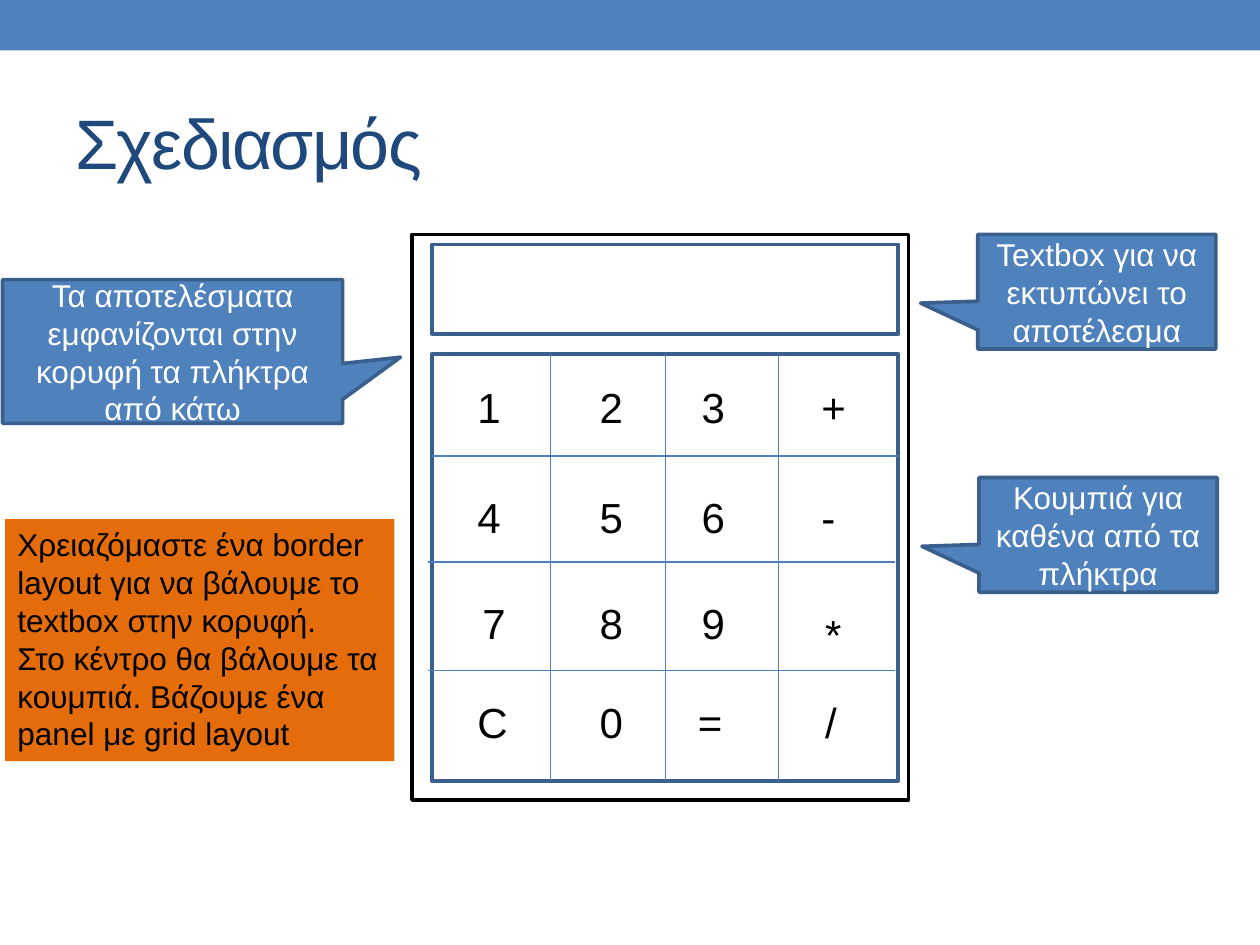
from pptx import Presentation
from pptx.util import Inches, Pt
from pptx.dml.color import RGBColor
from pptx.enum.shapes import MSO_SHAPE as Shape, MSO_CONNECTOR as Link
from pptx.enum.text import PP_ALIGN as Align, MSO_ANCHOR as Anchor, MSO_AUTO_SIZE as Fit
from lxml.etree import SubElement
from pptx.oxml.ns import qn

HUE = {"blue": "4F81BD", "edge": "3A5F8C", "navy": "1F497D",
       "orange": "E46C0A", "black": "000000", "white": "FFFFFF"}
FONT = "Arial"

TITLE = "Σχεδιασμός"
NOTE = ["Χρειαζόμαστε ένα border layout για να βάλουμε το textbox στην κορυφή.",
        "Στο κέντρο θα βάλουμε τα κουμπιά. Βάζουμε ένα panel με grid layout"]
CALLS = [
    ("Textbox για να εκτυπώνει το αποτέλεσμα", (7.76, 1.86, 1.89, 0.91), (-0.74, 0.1)),
    ("Τα αποτελέσματα εμφανίζονται στην κορυφή τα πλήκτρα από κάτω",
     (0.02, 2.22, 2.7, 1.14), (0.67, 0.04)),
    ("Κουμπιά για καθένα από τα πλήκτρα", (7.77, 3.79, 1.89, 0.91), (-0.74, 0.1)),
]
FRAMES = {"case": ((3.27, 1.86, 3.94, 4.49), "black"),
          "screen": ((3.43, 1.94, 3.7, 0.71), "edge"),
          "pad": ((3.43, 2.81, 3.7, 3.39), "edge")}
KEYS = ["123+", "456-", "789*", "C0=/"]
COLS = [3.69, 4.66, 5.47, 6.42]
ROWS = [2.98, 3.85, 4.69, 5.48]
WIDTH = {"C": 0.45, "=": 0.4, "+": 0.4, "-": 0.31, "*": 0.33, "/": 0.29}
NUDGE = {"7": (0.04, 0), "=": (-0.03, 0), "*": (0.03, 0.09), "/": (0.03, 0)}
DOWN = [4.37, 5.28, 6.18]
ACROSS = [(3.43, 3.62), (3.4, 4.46), (3.4, 5.32)]

deck = Presentation()
deck.slide_width, deck.slide_height = Inches(10), Inches(7.5)
slide = deck.slides.add_slide(deck.slide_layouts[6])
shapes = slide.shapes


def color(name):
    return RGBColor.from_string(HUE[name])


def write(shape, lines, size, hue, align=Align.LEFT, anchor=Anchor.TOP, wrap=True):
    frame = shape.text_frame
    frame.text = "\n".join(lines)
    frame.word_wrap = wrap
    frame.vertical_anchor = anchor
    for para in frame.paragraphs:
        para.alignment = align
        for run in para.runs:
            run.font.name = FONT
            run.font.size = Pt(size)
            run.font.color.rgb = color(hue)
    return frame


def draw(kind, box, fill=None, line=None):
    shape = shapes.add_shape(kind, *map(Inches, box))
    shape.shadow.inherit = False
    if fill:
        shape.fill.solid()
        shape.fill.fore_color.rgb = color(fill)
    else:
        shape.fill.background()
    if line:
        shape.line.color.rgb = color(line)
        shape.line.width = Pt(2.08)
    else:
        shape.line.fill.background()
    return shape


def rule(*ends):
    line = shapes.add_connector(Link.STRAIGHT, *map(Inches, ends))
    line.line.color.rgb = color("blue")
    line.line.width = Pt(0.75)
    SubElement(line._element.spPr, qn("a:effectLst"))
    return line


draw(Shape.RECTANGLE, (0, 0, 10, 0.4), "blue")
title = shapes.add_textbox(*map(Inches, (0.5, 0.58, 9, 1.08)))
head = write(title, [TITLE], 40, "navy", anchor=Anchor.MIDDLE)
head.paragraphs[0].runs[0]._r.get_or_add_rPr().set("spc", "-100")

parts = {name: draw(Shape.RECTANGLE, box, line=line)
         for name, (box, line) in FRAMES.items()}
left, top, width, height = FRAMES["pad"][0]
bars = [rule(x, top, x, top + height) for x in DOWN]
bars[1].begin_connect(parts["pad"], 0)
bars[1].end_connect(parts["pad"], 2)
for x, y in ACROSS:
    rule(x, y, x + width, y)

for y, row in zip(ROWS, KEYS):
    for x, key in zip(COLS, row):
        dx, dy = NUDGE.get(key, (0, 0))
        box = (x + dx, y + dy, WIDTH.get(key, 0.39), 0.5)
        label = shapes.add_textbox(*map(Inches, box))
        write(label, [key], 24, "black", wrap=False).auto_size = Fit.SHAPE_TO_FIT_TEXT

for text, box, tip in CALLS:
    call = draw(Shape.RECTANGULAR_CALLOUT, box, "blue", "edge")
    call.adjustments[0], call.adjustments[1] = tip
    write(call, [text], 18, "white", Align.CENTER, Anchor.MIDDLE)

note = draw(Shape.RECTANGLE, (0.04, 4.12, 3.09, 1.92), "orange")
write(note, NOTE, 18, "black").auto_size = Fit.SHAPE_TO_FIT_TEXT

deck.save("out.pptx")
